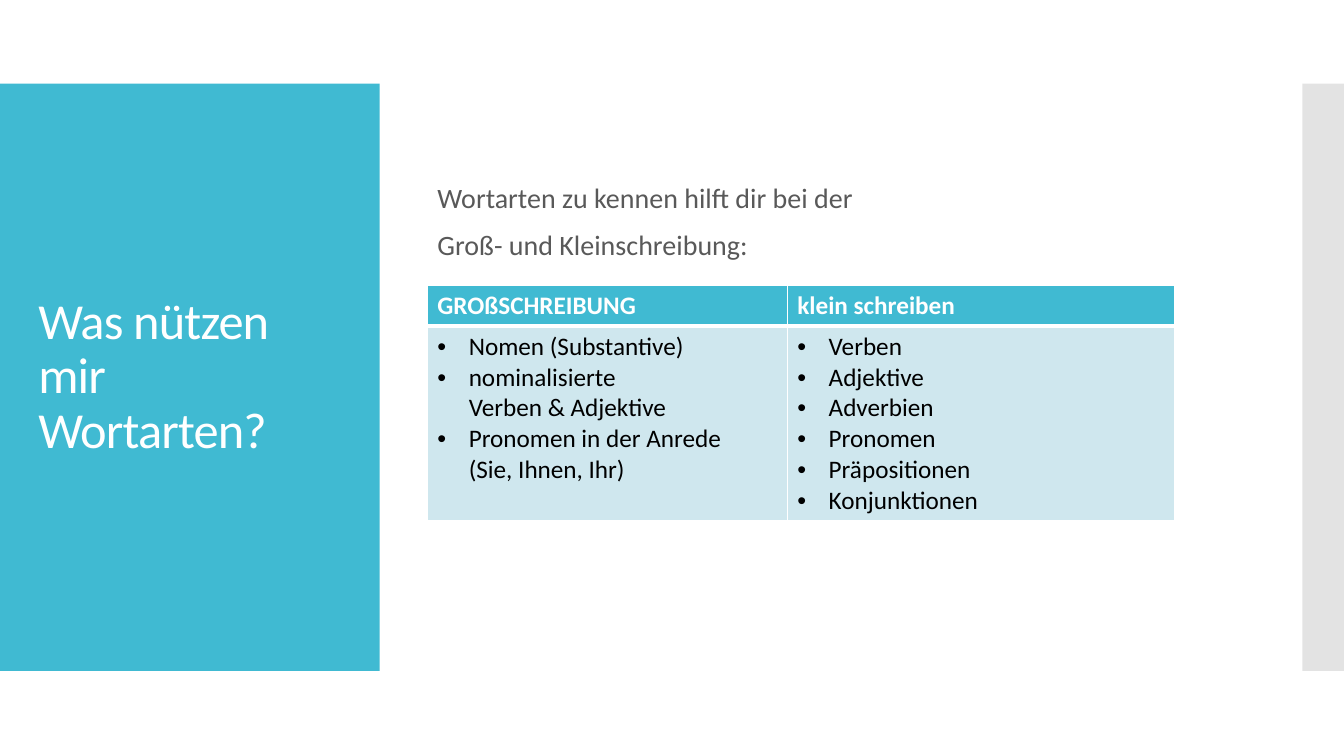
from lxml.etree import SubElement
from pptx import Presentation
from pptx.dml.color import RGBColor
from pptx.enum.shapes import MSO_SHAPE
from pptx.enum.text import MSO_ANCHOR, MSO_AUTO_SIZE, PP_ALIGN
from pptx.oxml import parse_xml
from pptx.oxml.ns import nsdecls, qn
from pptx.util import Cm, Pt

TEAL = RGBColor(0x40, 0xBA, 0xD2)
PALE = RGBColor(0xCF, 0xE7, 0xEE)
SILVER = RGBColor(0xC8, 0xC8, 0xC8)
GREY = RGBColor(0x59, 0x59, 0x59)
WHITE = RGBColor(0xFF, 0xFF, 0xFF)
BLACK = RGBColor(0, 0, 0)


def style(par, size, color, bold=False):
    for run in par.runs:
        run.font.name = "Calibri"
        run.font.size = Pt(size)
        run.font.color.rgb = color
        run.font.bold = bold


def place(shape, left, top, width, height):
    shape.left, shape.top = Cm(left), Cm(top)
    shape.width, shape.height = Cm(width), Cm(height)


deck = Presentation()
deck.slide_width, deck.slide_height = Cm(33.87), Cm(19.05)
slide = deck.slides.add_slide(deck.slide_layouts[1])
title, body = slide.placeholders

for left, width, color in ((0, 9.57, TEAL), (32.82, 1.05, SILVER)):
    panel = slide.shapes.add_shape(
        MSO_SHAPE.RECTANGLE, Cm(left), Cm(2.11), Cm(width), Cm(14.8))
    panel.shadow.inherit = False
    panel.fill.solid()
    panel.fill.fore_color.rgb = color
    panel.line.fill.background()
    title.element.addprevious(panel.element)
tint = panel.element.spPr.find(qn("a:solidFill"))[0]
SubElement(tint, qn("a:alpha"), val="50000")

place(title, 0.71, 3.12, 8.18, 12.78)
title.text_frame.text = "Was nützen mir Wortarten?"
head = title.text_frame.paragraphs[0]
head.alignment = PP_ALIGN.LEFT
head.line_spacing = 0.9
style(head, 36, WHITE)
head.runs[0].font._element.set("spc", "-60")

place(body, 10.77, 4.52, 20.32, 4.17)
body.text_frame.text = "Wortarten zu kennen hilft dir bei der\nGroß- und Kleinschreibung:"
for par, gap in zip(body.text_frame.paragraphs, (0, 12)):
    par.line_spacing = 0.9
    par.space_before = Pt(gap)
    props = par._p.get_or_add_pPr()
    props.set("marL", "0")
    props.set("indent", "0")
    SubElement(props, qn("a:buNone"))
    style(par, 20, GREY)

for holder, anchor in ((title, MSO_ANCHOR.MIDDLE), (body, MSO_ANCHOR.TOP)):
    holder.text_frame.vertical_anchor = anchor
    holder.text_frame.auto_size = MSO_AUTO_SIZE.NONE
    holder.text_frame.word_wrap = True

columns = (
    (9.07, "GROßSCHREIBUNG", (
        "Nomen (Substantive)",
        "nominalisierte \vVerben & Adjektive",
        "Pronomen in der Anrede \v(Sie, Ihnen, Ihr)")),
    (9.77, "klein schreiben", (
        "Verben", "Adjektive", "Adverbien",
        "Pronomen", "Präpositionen", "Konjunktionen")),
)
grid = slide.shapes.add_table(
    2, 2, Cm(10.77), Cm(7.19), Cm(18.84), Cm(5.9)).table
grid.rows[0].height, grid.rows[1].height = Cm(1.03), Cm(4.87)

for col, (width, label, words) in enumerate(columns):
    grid.columns[col].width = Cm(width)
    for row, lines in enumerate(((label,), words)):
        cell = grid.cell(row, col)
        edges = cell._tc.get_or_add_tcPr()
        for side in "LRTB":
            thick = 3 if (row, side) in ((0, "B"), (1, "T")) else 1
            edges.append(parse_xml(
                f'<a:ln{side} {nsdecls("a")} w="{Pt(thick)}"><a:solidFill>'
                f'<a:srgbClr val="{WHITE}"/></a:solidFill></a:ln{side}>'))
        cell.fill.solid()
        cell.fill.fore_color.rgb = (TEAL, PALE)[row]
        frame = cell.text_frame
        for index, line in enumerate(lines):
            par = frame.add_paragraph() if index else frame.paragraphs[0]
            par.text = line
            style(par, 18, (WHITE, BLACK)[row], row == 0)
            if row:
                props = par._p.get_or_add_pPr()
                props.set("marL", str(Cm(0.79)))
                props.set("indent", str(-Cm(0.79)))
                SubElement(props, qn("a:buFont"), typeface="Arial")
                SubElement(props, qn("a:buChar"), char="•")

deck.save("out.pptx")
